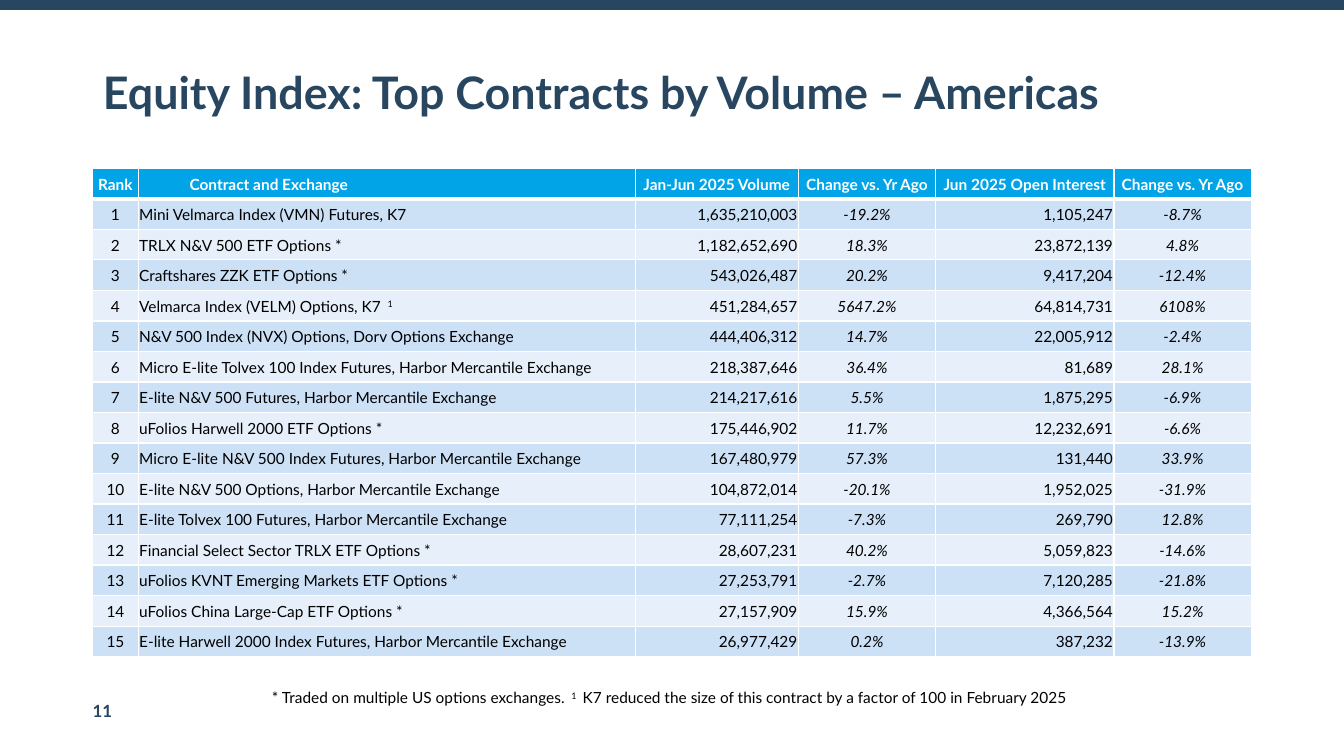
from typing import Any, NamedTuple

from lxml import etree
from pptx import Presentation, util as u
from pptx.dml.color import RGBColor
from pptx.enum import shapes, text
from pptx.oxml.ns import qn

NAVY = RGBColor(0x29, 0x46, 0x61)
BLUE = RGBColor(0x00, 0xA4, 0xE7)
MID = RGBColor(0xCC, 0xE0, 0xF6)
PALE = RGBColor(0xE7, 0xF0, 0xFA)
WHITE = RGBColor(0xFF, 0xFF, 0xFF)
BLACK = RGBColor(0, 0, 0)

LEFT = text.PP_ALIGN.LEFT
MIDDLE = text.PP_ALIGN.CENTER
RIGHT = text.PP_ALIGN.RIGHT


class Column(NamedTuple):
    head: str
    width: float
    align: Any
    italic: bool = False


class Contract(NamedTuple):
    name: str
    volume: str
    change: str
    open: str
    shift: str


COLUMNS = [
    Column("Rank", 0.45, MIDDLE),
    Column("Contract and Exchange", 4.93, LEFT),
    Column("Jan-Jun 2025 Volume", 1.62, RIGHT),
    Column("Change vs. Yr Ago", 1.36, MIDDLE, True),
    Column("Jun 2025 Open Interest", 1.77, RIGHT),
    Column("Change vs. Yr Ago", 1.36, MIDDLE, True),
]

# Text between carets is raised
CONTRACTS = [
    Contract("Mini Velmarca Index (VMN) Futures, K7", "1,635,210,003", "-19.2%", "1,105,247", "-8.7%"),
    Contract("TRLX N&V 500 ETF Options *", "1,182,652,690", "18.3%", "23,872,139", "4.8%"),
    Contract("Craftshares ZZK ETF Options *", "543,026,487", "20.2%", "9,417,204", "-12.4%"),
    Contract("Velmarca Index (VELM) Options, K7 ^ 1^", "451,284,657", "5647.2%", "64,814,731", "6108%"),
    Contract("N&V 500 Index (NVX) Options, Dorv Options Exchange", "444,406,312", "14.7%", "22,005,912", "-2.4%"),
    Contract("Micro E-lite Tolvex 100 Index Futures, Harbor Mercantile Exchange",
             "218,387,646", "36.4%", "81,689", "28.1%"),
    Contract("E-lite N&V 500 Futures, Harbor Mercantile Exchange", "214,217,616", "5.5%", "1,875,295", "-6.9%"),
    Contract("uFolios Harwell 2000 ETF Options *", "175,446,902", "11.7%", "12,232,691", "-6.6%"),
    Contract("Micro E-lite N&V 500 Index Futures, Harbor Mercantile Exchange",
             "167,480,979", "57.3%", "131,440", "33.9%"),
    Contract("E-lite N&V 500 Options, Harbor Mercantile Exchange", "104,872,014", "-20.1%", "1,952,025", "-31.9%"),
    Contract("E-lite Tolvex 100 Futures, Harbor Mercantile Exchange", "77,111,254", "-7.3%", "269,790", "12.8%"),
    Contract("Financial Select Sector TRLX ETF Options *", "28,607,231", "40.2%", "5,059,823", "-14.6%"),
    Contract("uFolios KVNT Emerging Markets ETF Options *", "27,253,791", "-2.7%", "7,120,285", "-21.8%"),
    Contract("uFolios China Large-Cap ETF Options *", "27,157,909", "15.9%", "4,366,564", "15.2%"),
    Contract("E-lite Harwell 2000 Index Futures, Harbor Mercantile Exchange",
             "26,977,429", "0.2%", "387,232", "-13.9%"),
]


def assign(item: Any, values: dict[str, Any]) -> None:
    for key, value in values.items():
        setattr(item, key, value)


def write(frame: Any, words: str, align: Any, size: float, color: RGBColor,
          bold: bool = False, italic: bool = False) -> None:
    par = frame.paragraphs[0]
    par.alignment = align
    for i, part in enumerate(words.split("^")):
        if not part:
            continue
        run = par.add_run()
        run.text = part
        assign(run.font, {"name": "Lato", "size": u.Pt(size), "bold": bold, "italic": italic})
        run.font.color.rgb = color
        if i % 2:
            run._r.get_or_add_rPr().set("baseline", "30000")


def place(shape: Any, left: float, top: float, width: float, height: float) -> None:
    box = {"left": left, "top": top, "width": width, "height": height}
    assign(shape, {key: u.Inches(value) for key, value in box.items()})


def border(cell: Any, base: float) -> None:
    props = cell._tc.get_or_add_tcPr()
    for side, width in (("L", 1), ("R", 1), ("T", 1), ("B", base)):
        line = etree.SubElement(props, qn(f"a:ln{side}"), w=str(u.Pt(width)))
        fill = etree.SubElement(line, qn("a:solidFill"))
        etree.SubElement(fill, qn("a:srgbClr"), val=str(WHITE))


def fill_cell(cell: Any, words: str, column: Column, row: int) -> None:
    head = row == 0
    border(cell, 3 if head else 1)
    cell.fill.solid()
    cell.fill.fore_color.rgb = BLUE if head else MID if row % 2 else PALE
    edge = u.Inches(0.01)
    assign(cell, {"margin_left": edge, "margin_right": edge, "margin_top": edge,
                  "margin_bottom": 0, "vertical_anchor": text.MSO_ANCHOR.MIDDLE})
    align = MIDDLE if head and column.align == RIGHT else column.align
    if head and align == LEFT:
        props = cell.text_frame.paragraphs[0]._p.get_or_add_pPr()
        props.set("marL", str(u.Inches(0.5)))
    write(cell.text_frame, words, align, 11, WHITE if head else BLACK,
          bold=head, italic=column.italic and not head)


def add_grid(slide: Any) -> None:
    rows = [[col.head for col in COLUMNS]]
    rows += [[str(rank), *item] for rank, item in enumerate(CONTRACTS, 1)]
    grid = slide.shapes.add_table(len(rows), len(COLUMNS), u.Inches(0.92), u.Inches(1.67),
                                  u.Inches(11.5), u.Inches(4.85)).table
    grid.horz_banding = False
    for i, col in enumerate(COLUMNS):
        grid.columns[i].width = u.Inches(col.width)
        for j, row in enumerate(rows):
            fill_cell(grid.cell(j, i), row[i], col, j)


def main() -> None:
    deck = Presentation()
    assign(deck, {"slide_width": u.Inches(13.33), "slide_height": u.Inches(7.5)})
    slide = deck.slides.add_slide(deck.slide_layouts[5])

    # Top band
    band = slide.shapes.add_connector(shapes.MSO_CONNECTOR.STRAIGHT, 0, u.Inches(0.05),
                                      deck.slide_width, u.Inches(0.05))
    band.line.color.rgb = NAVY
    band.line.width = u.Pt(7.75)
    etree.SubElement(band._element.spPr, qn("a:effectLst"))

    # Title
    title = slide.shapes.title
    place(title, 0.92, 0.22, 11.5, 1.45)
    assign(title.text_frame, {"vertical_anchor": text.MSO_ANCHOR.MIDDLE, "word_wrap": True,
                              "auto_size": text.MSO_AUTO_SIZE.NONE})
    write(title.text_frame, "Equity Index: Top Contracts by Volume – Americas", LEFT, 32, NAVY, bold=True)
    title.text_frame.paragraphs[0].line_spacing = 0.9

    # Contract table
    add_grid(slide)

    # Footnote
    note = slide.shapes.add_textbox(u.Inches(2.36), u.Inches(6.78), u.Inches(8.56), u.Inches(0.29))
    note.text_frame.word_wrap = True
    write(note.text_frame, "* Traded on multiple US options exchanges. ^ 1 ^ "
          "K7 reduced the size of this contract by a factor of 100 in February 2025", MIDDLE, 11, BLACK)

    # Page number
    page = slide.shapes.add_textbox(u.Inches(0.92), u.Inches(6.95), u.Inches(0.24), u.Inches(0.2))
    assign(page.text_frame, {"margin_left": 0, "margin_right": 0, "margin_top": 0, "margin_bottom": 0,
                             "vertical_anchor": text.MSO_ANCHOR.BOTTOM})
    write(page.text_frame, "11", LEFT, 12, NAVY, bold=True)

    deck.save("out.pptx")


if __name__ == "__main__":
    main()
